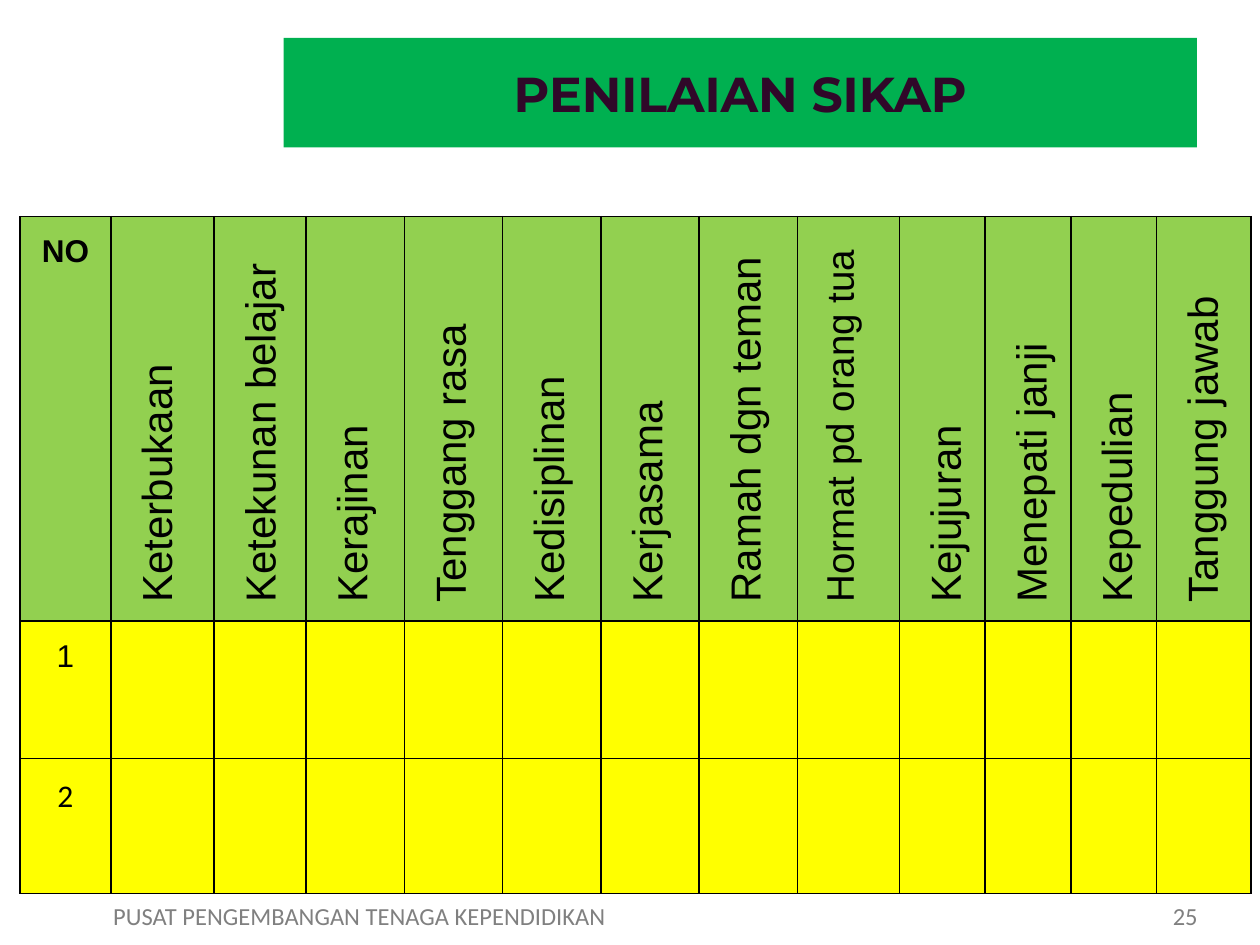
from dataclasses import dataclass

from lxml import etree
from pptx import Presentation
from pptx.dml.color import RGBColor
from pptx.enum.shapes import MSO_SHAPE
from pptx.enum.text import MSO_ANCHOR, MSO_AUTO_SIZE, PP_ALIGN
from pptx.oxml.ns import qn
from pptx.util import Inches, Pt

RECTANGLE = MSO_SHAPE.RECTANGLE
MIDDLE = MSO_ANCHOR.MIDDLE
FIT_SHAPE = MSO_AUTO_SIZE.SHAPE_TO_FIT_TEXT
LEFT, CENTER, JUSTIFY = PP_ALIGN.LEFT, PP_ALIGN.CENTER, PP_ALIGN.JUSTIFY


@dataclass(frozen=True)
class Theme:
    banner: str = "00B050"
    title: str = "300829"
    header: str = "92D050"
    body: str = "FFFF00"
    ink: str = "000000"
    muted: str = "808080"
    title_font: str = "Montserrat"
    table_font: str = "Arial"
    footer_font: str = "Calibri"
    title_size: int = 28
    label_size: int = 24
    long_label_size: int = 22
    number_size: int = 18
    footer_size: int = 14


THEME = Theme()
ATTITUDES = [
    "Keterbukaan", "Ketekunan belajar", "Kerajinan", "Tenggang rasa",
    "Kedisiplinan", "Kerjasama", "Ramah dgn teman", "Hormat pd orang tua",
    "Kejujuran", "Menepati janji", "Kepedulian", "Tanggung jawab",
]
LONGEST_FULL_SIZE_LABEL = 17
COLUMN_WIDTHS = [0.72, 0.82, 0.73] + [0.78] * 5 + [0.81] + [0.68] * 3 + [0.75]
ROW_HEIGHTS = [3.21, 1.09, 1.07]
NUMBER_FONTS = {"1": THEME.table_font, "2": THEME.footer_font}


def write(frame, text, *, font, size, color, bold=False, align=LEFT,
          line_spacing=None, after=None, indent=None):
    para = frame.paragraphs[0]
    para.alignment = align
    if line_spacing is not None:
        para.line_spacing = line_spacing
        para.space_before = Pt(0)
    if after is not None:
        para.space_after = Pt(after)
    if indent is not None:
        properties = para._p.get_or_add_pPr()
        properties.set("marL", str(Inches(indent)))
        properties.set("indent", "0")
    span = para.add_run()
    span.text = text
    span.font.name = font
    span.font.size = Pt(size)
    span.font.bold = bold
    span.font.color.rgb = RGBColor.from_string(color)


def add_banner(page, box, text):
    banner = page.shapes.add_shape(RECTANGLE, *map(Inches, box))
    banner.shadow.inherit = False
    banner.fill.solid()
    banner.fill.fore_color.rgb = RGBColor.from_string(THEME.banner)
    banner.line.fill.background()
    banner.text_frame.vertical_anchor = MIDDLE
    write(banner.text_frame, text, font=THEME.title_font, size=THEME.title_size,
          color=THEME.title, bold=True, align=CENTER)


def style_cell(cell, color):
    properties = cell._tc.get_or_add_tcPr()
    for side in ("a:lnL", "a:lnR", "a:lnT", "a:lnB"):
        border = etree.SubElement(properties, qn(side), w=str(Pt(1)))
        fill = etree.SubElement(border, qn("a:solidFill"))
        etree.SubElement(fill, qn("a:srgbClr"), val=THEME.ink)
    cell.fill.solid()
    cell.fill.fore_color.rgb = RGBColor.from_string(color)
    cell.margin_left = cell.margin_right = Inches(0.07)
    cell.margin_top = cell.margin_bottom = 0


def write_cell(cell, text, **look):
    write(cell.text_frame, text, color=THEME.ink, line_spacing=1.5, after=6, **look)


def add_assessment_table(page, box):
    table = page.shapes.add_table(
        len(ROW_HEIGHTS), len(COLUMN_WIDTHS), *map(Inches, box)).table
    table.horz_banding = False
    for column, width in zip(table.columns, COLUMN_WIDTHS):
        column.width = Inches(width)
    for index, (row, height) in enumerate(zip(table.rows, ROW_HEIGHTS)):
        row.height = Inches(height)
        for cell in row.cells:
            style_cell(cell, THEME.body if index else THEME.header)

    write_cell(table.cell(0, 0), "NO", font=THEME.table_font,
               size=THEME.number_size, bold=True, align=CENTER)
    for index, attitude in enumerate(ATTITUDES, start=1):
        cell = table.cell(0, index)
        cell._tc.get_or_add_tcPr().set("vert", "vert270")
        fits = len(attitude) <= LONGEST_FULL_SIZE_LABEL
        size = THEME.label_size if fits else THEME.long_label_size
        write_cell(cell, attitude, font=THEME.table_font,
                   size=size, align=JUSTIFY, indent=0.08)
    for index, (number, font) in enumerate(NUMBER_FONTS.items(), start=1):
        write_cell(table.cell(index, 0), number, font=font,
                   size=THEME.number_size, align=CENTER)


def add_footer(page, box, text):
    frame = page.shapes.add_textbox(*map(Inches, box)).text_frame
    frame.word_wrap = False
    frame.auto_size = FIT_SHAPE
    write(frame, text, font=THEME.footer_font, size=THEME.footer_size,
          color=THEME.muted)


def main():
    deck = Presentation()
    deck.slide_width, deck.slide_height = Inches(10), Inches(7.5)
    page = deck.slides.add_slide(deck.slide_layouts[6])
    add_footer(page, (0.8, 7.1, 4.14, 0.34), "PUSAT PENGEMBANGAN TENAGA KEPENDIDIKAN")
    add_footer(page, (9.21, 7.1, 0.43, 0.34), "25")
    add_banner(page, (2.25, 0.3, 7.25, 0.87), "PENILAIAN SIKAP")
    add_assessment_table(page, (0.16, 1.72, 9.77, 5.37))
    deck.save("out.pptx")


if __name__ == "__main__":
    main()
